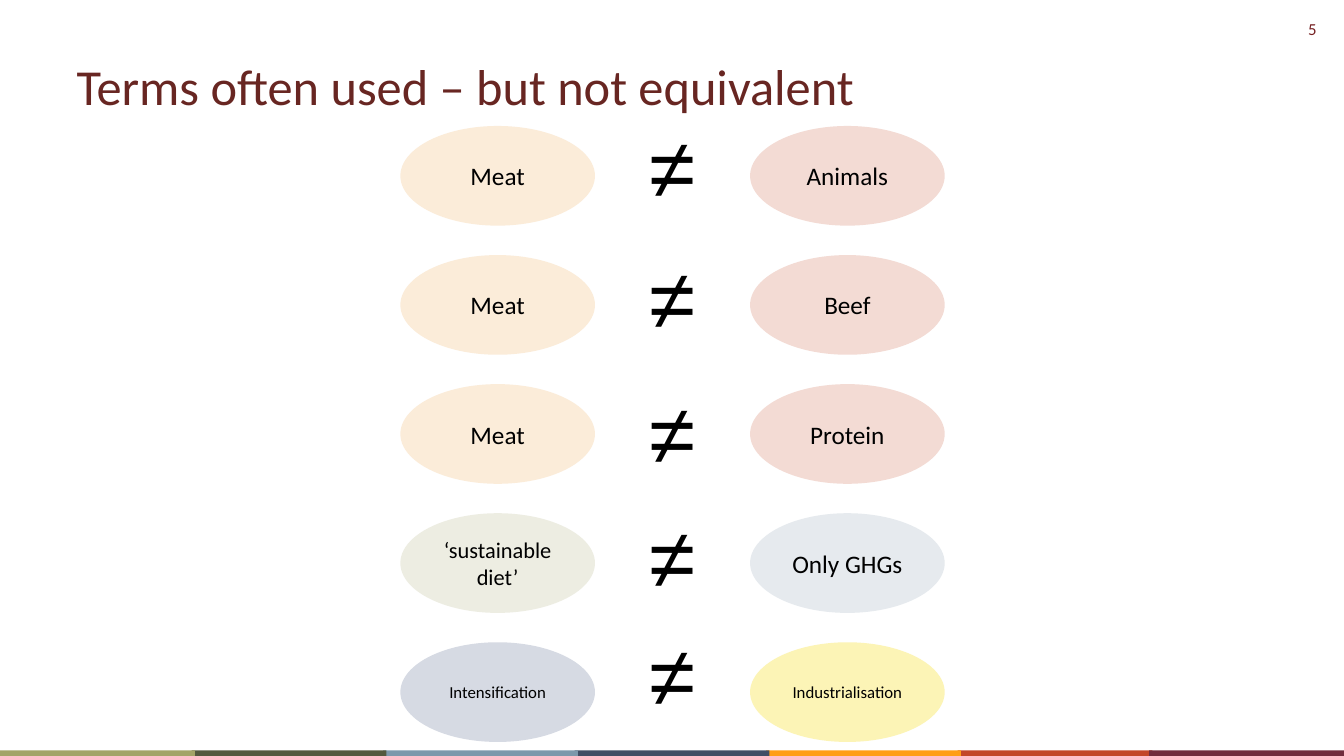
"""Build the slide of paired terms that are often used but not equivalent."""
from pptx import Presentation
from pptx.dml.color import RGBColor
from pptx.enum.shapes import MSO_SHAPE
from pptx.enum.text import MSO_ANCHOR, MSO_AUTO_SIZE, PP_ALIGN
from pptx.util import Pt


def add_filled_shape(kind, left, top, width, height, colour):
    shape = slide.shapes.add_shape(kind, Pt(left), Pt(top), Pt(width), Pt(height))
    shape.shadow.inherit = False
    shape.fill.solid()
    shape.fill.fore_color.rgb = RGBColor.from_string(colour)
    shape.line.fill.background()
    return shape


def write_text(shape, text, size, colour, alignment, font="Calibri", spacing=None):
    frame = shape.text_frame
    frame.word_wrap = True
    frame.text = text
    paragraph = frame.paragraphs[0]
    paragraph.alignment = alignment
    paragraph.line_spacing = spacing
    run_font = paragraph.runs[0].font
    for name, value in {"name": font, "size": Pt(size), "bold": False}.items():
        setattr(run_font, name, value)
    run_font.color.rgb = RGBColor.from_string(colour)
    return frame


presentation = Presentation()
presentation.slide_width = Pt(960)
presentation.slide_height = Pt(540)
slide = presentation.slides.add_slide(presentation.slide_layouts[5])

number_box = slide.shapes.add_textbox(Pt(897), Pt(10), Pt(50.5), Pt(21.8))
write_text(number_box, "5", 12, "762123", PP_ALIGN.RIGHT)

strip = [(5, "C34628"), (6, "712C3D"), (4, "FF9E16"), (3, "404E65"),
         (2, "7C98AB"), (1, "53593E"), (0, "A3A467")]
for column, colour in strip:
    add_filled_shape(MSO_SHAPE.RECTANGLE, 136.8 * column, 536, 139.2, 4, colour)

title = slide.shapes.title
title_place = {"left": Pt(47.5), "top": Pt(34), "width": Pt(864), "height": Pt(53.5)}
for name, value in title_place.items():
    setattr(title, name, value)
title_frame = write_text(title, "Terms often used – but not equivalent", 36, "682622",
                         PP_ALIGN.LEFT)
title_frame.vertical_anchor = MSO_ANCHOR.MIDDLE
title_frame.auto_size = MSO_AUTO_SIZE.NONE

pairs = [
    (("Meat", 18, "FBECD9"), ("Animals", 18, "F3DBD4"), 118),
    (("Meat", 18, "FBECD9"), ("Beef", 18, "F3DBD4"), 211.7),
    (("Meat", 18, "FBECD9"), ("Protein", 18, "F3DBD4"), 308.2),
    (("‘sustainable diet’", 16, "EDEDE2"), ("Only GHGs", 18, "E6EAEE"), 396.7),
    (("Intensification", 12, "D6DAE3"), ("Industrialisation", 12, "FCF4B6"), 481),
]
for row, (left_term, right_term, sign_top) in enumerate(pairs):
    for left, (term, size, colour) in ((286, left_term), (535.8, right_term)):
        ellipse = add_filled_shape(MSO_SHAPE.OVAL, left, 90 + 92.2 * row, 139, 71.2, colour)
        frame = write_text(ellipse, term, size, "000000", PP_ALIGN.CENTER)
        frame.vertical_anchor = MSO_ANCHOR.MIDDLE
    sign = slide.shapes.add_textbox(Pt(424), Pt(sign_top), Pt(112.3), Pt(45.4))
    write_text(sign, "≠", 60, "000000", PP_ALIGN.CENTER, "Arial", Pt(32))

presentation.save("out.pptx")
